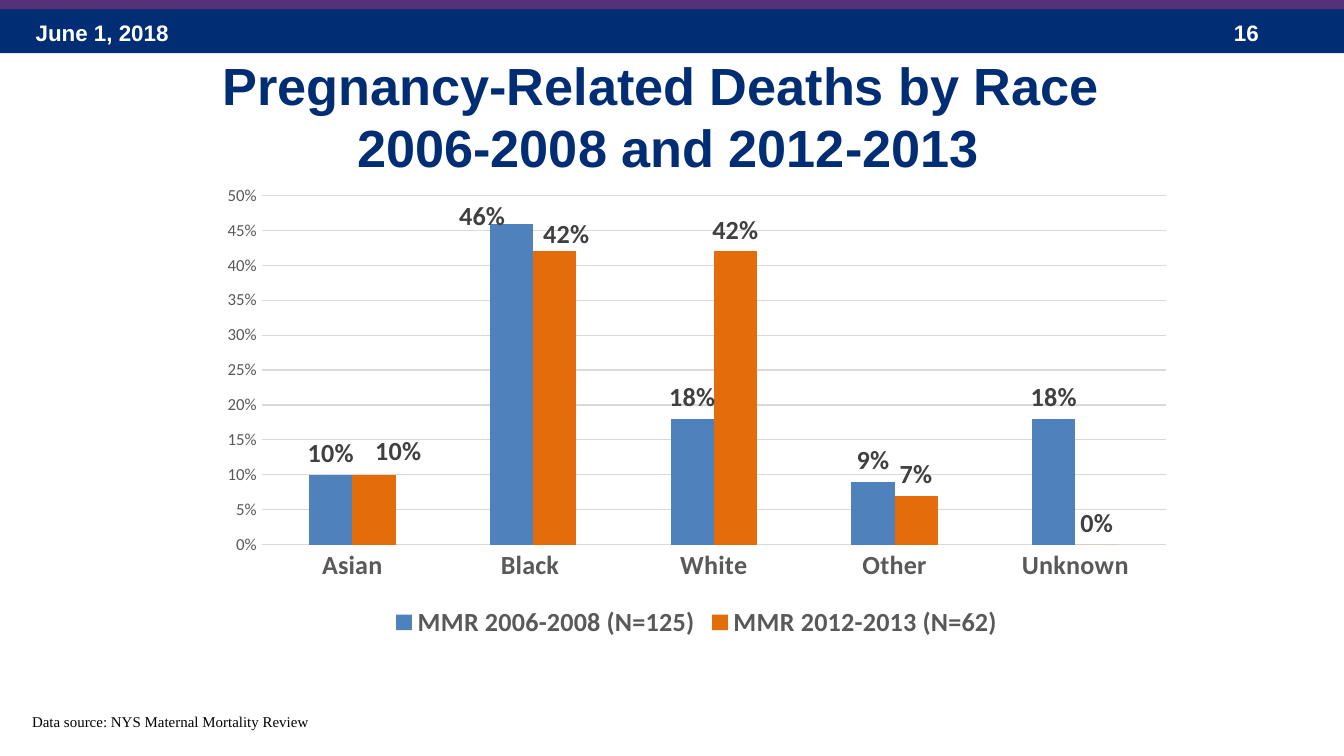
from lxml.etree import SubElement
from pptx import Presentation
from pptx.chart.data import CategoryChartData
from pptx.dml.color import RGBColor
from pptx.enum.chart import XL_CHART_TYPE as ChartType
from pptx.enum.chart import XL_LABEL_POSITION as LabelPos
from pptx.enum.chart import XL_LEGEND_POSITION as LegendPos
from pptx.enum.chart import XL_TICK_MARK as Tick
from pptx.enum.shapes import MSO_SHAPE as Preset
from pptx.enum.text import MSO_ANCHOR as Anchor
from pptx.enum.text import PP_ALIGN as Align
from pptx.oxml.ns import qn
from pptx.util import Inches, Pt

NAVY, PURPLE, WHITE, BLACK = "002D73", "553278", "FFFFFF", "000000"
GREY, DARK, RULE = "595959", "404040", "D9D9D9"
rgb = RGBColor.from_string


def style(font, face, size, color, bold=False):
    font.name, font.size, font.bold = face, Pt(size), bold
    font.color.rgb = rgb(color)


def add_layout(parent, index, modes, **percents):
    """Place a chart part by percentages of the chart's size."""
    layout = SubElement(parent, qn("c:layout"))
    manual = SubElement(layout, qn("c:manualLayout"))
    for tag, value in modes.items():
        SubElement(manual, qn(f"c:{tag}")).set("val", value)
    for tag, value in percents.items():
        SubElement(manual, qn(f"c:{tag}")).set("val", str(value / 100))
    parent.insert(index, layout)


# A 16:9 slide
deck = Presentation()
deck.slide_width = Inches(10)
deck.slide_height = deck.slide_width * 9 // 16
slide = deck.slides.add_slide(deck.slide_layouts[6])
shapes = slide.shapes

# Left, top, width and height in percent of the slide
percents = {
    "navy band": (0, 1.2, 100, 5.85),
    "purple band": (0, -0.4, 100, 1.6),
    "date": (1.67, 1.7, 23.3, 5.3),
    "page": (90.83, 1.7, 7.5, 5.3),
    "title": (8.4, 6.04, 81.5, 18.5),
    "source": (1.4, 93.3, 22.7, 4.3),
    "chart": (15.5, 23.3, 72.7, 61.87),
}
cell = (deck.slide_width / 100, deck.slide_height / 100) * 2
places = {part: [round(share * unit) for share, unit in zip(area, cell)]
          for part, area in percents.items()}

# Header bands
for part, color in [("navy band", NAVY), ("purple band", PURPLE)]:
    band = shapes.add_shape(Preset.RECTANGLE, *places[part])
    band.shadow.inherit = False
    band.fill.solid()
    band.fill.fore_color.rgb = rgb(color)
    band.line.fill.background()

# Date, page number, title and source
texts = [
    ("date", ["June 1, 2018"], "Arial", 12, WHITE, Align.LEFT),
    ("page", ["16"], "Arial", 12, WHITE, Align.LEFT),
    ("title", ["Pregnancy-Related Deaths by Race", " 2006-2008 and 2012-2013"],
     "Arial", 28, NAVY, Align.CENTER),
    ("source", ["Data source: NYS Maternal Mortality Review"],
     "Times New Roman", 8, BLACK, Align.LEFT),
]
for part, lines, face, size, color, align in texts:
    frame = shapes.add_textbox(*places[part]).text_frame
    frame.word_wrap = part != "source"
    frame.vertical_anchor = Anchor.MIDDLE
    for number, line in enumerate(lines):
        paragraph = frame.add_paragraph() if number else frame.paragraphs[0]
        paragraph.alignment = align
        run = paragraph.add_run()
        run.text = line
        style(run.font, face, size, color, part != "source")

# Deaths by race
deaths = CategoryChartData(number_format="0%")
deaths.categories = ["Asian", "Black ", "White", "Other", "Unknown"]
deaths.add_series("MMR 2006-2008 (N=125)", [0.1, 0.46, 0.18, 0.09, 0.18])
deaths.add_series("MMR 2012-2013 (N=62)", [0.1, 0.42, 0.42, 0.07, 0])
chart = shapes.add_chart(ChartType.COLUMN_CLUSTERED, *places["chart"], deaths).chart
style(chart.font, "Calibri", 10, BLACK)
chart.has_title = False
chart.has_legend = True
chart.legend.position = LegendPos.BOTTOM
chart.legend.include_in_layout = False
style(chart.legend.font, "Calibri", 14, GREY, True)

# Axes
races, rates = chart.category_axis, chart.value_axis
for axis, size, bold in [(races, 14, True), (rates, 9, False)]:
    axis.major_tick_mark = axis.minor_tick_mark = Tick.NONE
    style(axis.tick_labels.font, "Calibri", size, GREY, bold)
rates.minimum_scale, rates.maximum_scale, rates.major_unit = 0, 0.5, 0.05
rates.tick_labels.number_format = "0%"
rates.tick_labels.number_format_is_linked = False
rates.format.line.fill.background()
for line in (races.format.line, rates.major_gridlines.format.line):
    line.color.rgb = rgb(RULE)
    line.width = Pt(0.75)

# Columns, with the labels that are moved aside
columns = chart.plots[0]
columns.gap_width, columns.overlap, columns.vary_by_categories = 219, 0, False
moved = [{1: (-3, 3)}, {0: (2.5, -0.5), 1: (1.2, 1)}]
for period, color, shifts in zip(columns.series, ("4F81BD", "E46C0A"), moved):
    period.format.fill.solid()
    period.format.fill.fore_color.rgb = rgb(color)
    labels = period.data_labels
    labels.show_value = True
    labels.number_format, labels.number_format_is_linked = "0%", False
    labels.position = LabelPos.OUTSIDE_END
    style(labels.font, "Calibri", 14, DARK, True)
    for race, (x, y) in shifts.items():
        label = period.points[race].data_label
        style(label.font, "Calibri", 14, DARK, True)
        label.position = LabelPos.OUTSIDE_END
        add_layout(labels._element.findall(qn("c:dLbl"))[-1], 1, {}, x=x, y=y)

# Plot area
plot_area = columns._element.getparent()
for layout in plot_area.findall(qn("c:layout")):
    plot_area.remove(layout)
add_layout(plot_area, 0, {"layoutTarget": "inner", "xMode": "edge", "yMode": "edge"},
           x=5.5, y=4.2, w=92.5, h=74.6)

deck.save("out.pptx")
